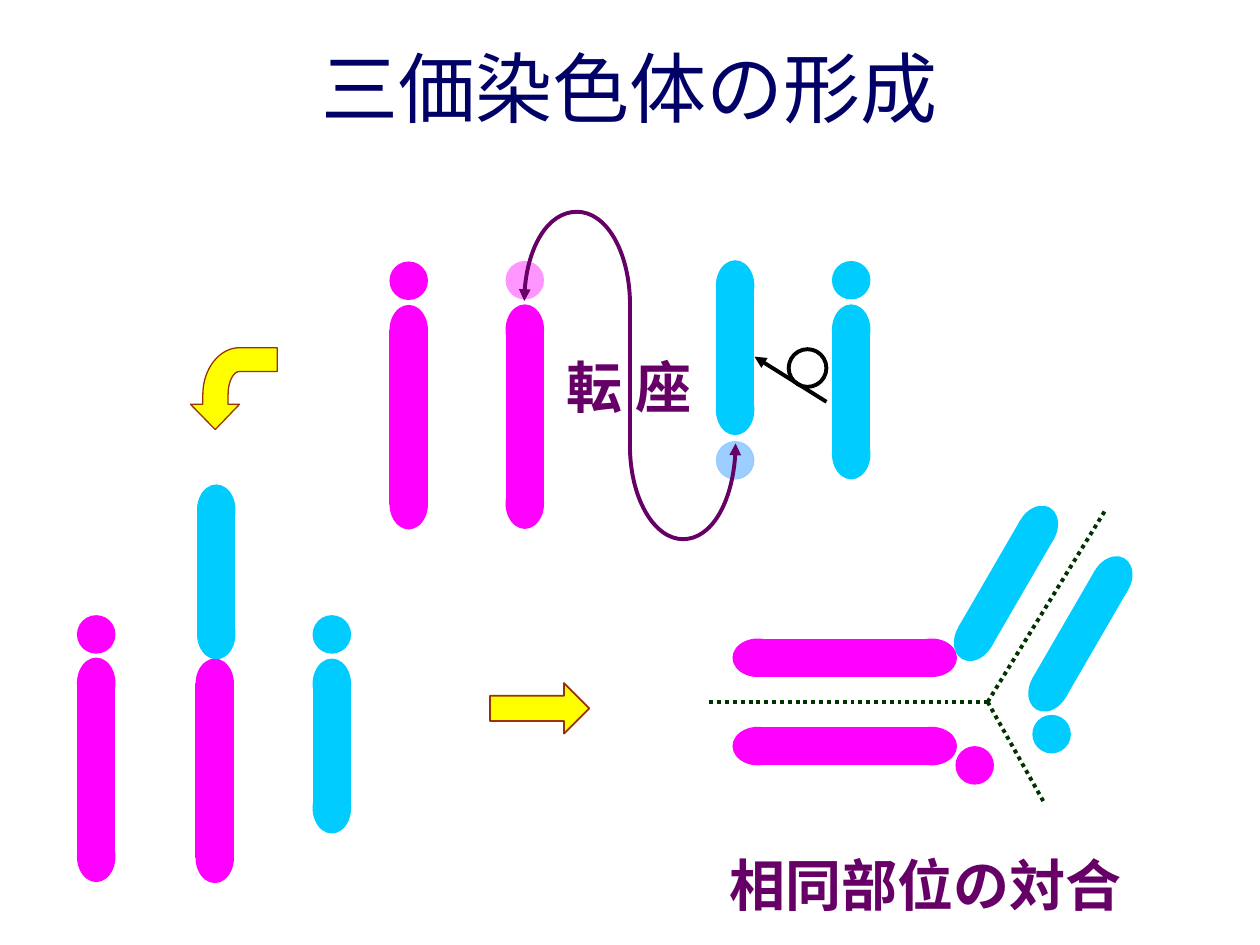
import math
from typing import NamedTuple

from lxml import etree
from pptx import Presentation
from pptx import util as u
from pptx.dml.color import RGBColor
from pptx.enum import dml, shapes, text
from pptx.oxml import ns

PINK, BLUE, PALE_PINK, PALE_BLUE = "FF00FF", "00CCFF", "FF96FF", "96CCFF"
NAVY, PURPLE, GREEN, BLACK = "000066", "660066", "003300", "000000"
YELLOW, BROWN = "FFFF00", "993300"
WIDTH, CAP, LONG, SHORT = 0.75, 1.0, 3.5, 2.5
JAPANESE = "Noto Sans CJK JP"


class Arm(NamedTuple):
    x: float
    y: float
    length: float
    color: str
    angle: float = 0


class Satellite(NamedTuple):
    x: float
    y: float
    color: str
    opacity: int = 100


class Line(NamedTuple):
    start: tuple
    end: tuple
    color: str
    dotted: bool = False
    head: bool = False


class Outline(NamedTuple):
    points: list
    curves: list
    closed: bool
    fill: str | None
    color: str
    weight: float


class Label(NamedTuple):
    words: str
    x: float
    y: float
    width: float


ARMS = [
    Arm(8.24, 8.41, LONG, PINK),
    Arm(17.16, 7.9, SHORT, BLUE),
    Arm(17.03, 13.26, LONG, PINK, 270),
    Arm(20.28, 11.76, SHORT, BLUE, 30.1),
    Arm(21.78, 12.78, SHORT, BLUE, 30.1),
    Arm(17.03, 15.04, LONG, PINK, 270),
    Arm(10.58, 8.4, LONG, PINK),
    Arm(14.82, 7.01, SHORT, BLUE),
    Arm(1.94, 15.52, LONG, PINK),
    Arm(6.69, 15.04, SHORT, BLUE),
    Arm(4.33, 15.54, LONG, PINK),
    Arm(4.36, 11.53, SHORT, BLUE),
]
SATELLITES = [
    Satellite(8.24, 5.66, PINK),
    Satellite(17.16, 5.65, BLUE),
    Satellite(19.65, 15.43, PINK),
    Satellite(21.2, 14.8, BLUE),
    Satellite(10.58, 5.65, PALE_PINK),
    Satellite(14.82, 9.28, PALE_BLUE, 94),
    Satellite(1.94, 12.79, PINK),
    Satellite(6.69, 12.79, BLUE),
]
JUNCTION = (19.91, 14.15)
LINES = [Line(JUNCTION, tip, GREEN, dotted=True)
         for tip in [(14.27, 14.15), (22.28, 10.29), (21.03, 16.15)]]
LINES += [
    Line((16.66, 8.1), (15.21, 7.19), BLACK, head=True),
    Line((12.7, 6.02), (12.7, 9.02), PURPLE),
]
BENT_ARROW = Outline(
    [(4.34, 8.66), (3.84, 8.15), (4.09, 8.15), (4.09, 7.95), (4.09, 7.44),
     (4.42, 7.01), (4.83, 7.01), (5.59, 7.01), (5.59, 7.49), (4.83, 7.49),
     (4.7, 7.49), (4.6, 7.7), (4.6, 7.95), (4.6, 8.15), (4.83, 8.15)],
    [3, 9], True, YELLOW, BROWN, 0.75)
SWAP_ARCS = [
    Outline([(12.7, 6.05), (12.67, 5.05), (12.22, 4.27), (11.63, 4.27),
             (11.05, 4.27), (10.57, 5.08), (10.57, 6.07)],
            [0, 3], False, None, PURPLE, 2.25),
    Outline([(12.7, 8.99), (12.7, 10.03), (13.18, 10.87), (13.77, 10.87),
             (14.35, 10.87), (14.83, 10.01), (14.83, 8.94)],
            [0, 3], False, None, PURPLE, 2.25),
]
LABELS = [Label("転 座", 11.18, 6.99, 3.66),
          Label("相同部位の対合", 14.45, 17.02, 9)]


def paint(target, color: str) -> None:
    if hasattr(target, "solid"):
        target.solid()
        target = target.fore_color
    target.rgb = RGBColor.from_string(color)


def apply(target, values: dict) -> None:
    for key, value in values.items():
        setattr(target, key, value)


def style(shape, fill: str | None, outline: str, weight: float) -> None:
    shape.shadow.inherit = False
    if fill:
        paint(shape.fill, fill)
    else:
        shape.fill.background()
    paint(shape.line.fill, outline)
    shape.line.width = u.Pt(weight)


def centered(parent, kind, x: float, y: float, width: float, height: float):
    return parent.add_shape(kind, u.Cm(x - width / 2), u.Cm(y - height / 2),
                            u.Cm(width), u.Cm(height))


def add_head(line) -> None:
    etree.SubElement(line.line._get_or_add_ln(), ns.qn("a:tailEnd"), type="triangle")


def draw_arm(slide, arm: Arm) -> None:
    group = slide.shapes.add_group_shape().shapes
    turn = math.radians(arm.angle)
    oval, bar = shapes.MSO_SHAPE.OVAL, shapes.MSO_SHAPE.RECTANGLE
    for kind, shift, height in [(oval, -0.5, CAP), (bar, 0, arm.length), (oval, 0.5, CAP)]:
        reach = shift * arm.length
        part = centered(group, kind, arm.x - reach * math.sin(turn),
                        arm.y + reach * math.cos(turn), WIDTH, height)
        part.rotation = arm.angle
        style(part, arm.color, arm.color, 0)


def draw_satellite(slide, satellite: Satellite) -> None:
    spot = centered(slide.shapes, shapes.MSO_SHAPE.OVAL, satellite.x, satellite.y, WIDTH, WIDTH)
    style(spot, satellite.color, satellite.color, 0)
    if satellite.opacity < 100:
        shade = spot._element.spPr.find(ns.qn("a:solidFill"))[0]
        etree.SubElement(shade, ns.qn("a:alpha"), val=str(satellite.opacity * 1000))


def draw_line(slide, line: Line) -> None:
    ends = [u.Cm(value) for value in line.start + line.end]
    stroke = slide.shapes.add_connector(shapes.MSO_CONNECTOR.STRAIGHT, *ends)
    paint(stroke.line.fill, line.color)
    stroke.line.width = u.Pt(2.25)
    if line.dotted:
        stroke.line.dash_style = dml.MSO_LINE.ROUND_DOT
    if line.head:
        add_head(stroke)
    etree.SubElement(stroke._element.spPr, ns.qn("a:effectLst"))


def draw_outline(slide, outline: Outline):
    points = [(u.Cm(x), u.Cm(y)) for x, y in outline.points]
    builder = slide.shapes.build_freeform(*points[0])
    builder.add_line_segments(points[1:], close=outline.closed)
    shape = builder.convert_to_shape()
    steps = list(shape._element.iter(ns.qn("a:lnTo")))
    for first in outline.curves:
        curve = etree.Element(ns.qn("a:cubicBezTo"))
        steps[first].addprevious(curve)
        for step in steps[first:first + 3]:
            curve.append(step[0])
            step.getparent().remove(step)
    style(shape, outline.fill, outline.color, outline.weight)
    return shape


def format_text(frame, words: str, color: str, font: dict) -> None:
    run = frame.paragraphs[0].add_run()
    run.text = words
    apply(run.font, font)
    paint(run.font.fill, color)
    etree.SubElement(run.font._element, ns.qn("a:ea"), typeface=JAPANESE)


def draw_label(slide, label: Label) -> None:
    box = slide.shapes.add_textbox(u.Cm(label.x), u.Cm(label.y), u.Cm(label.width), u.Cm(1.6))
    apply(box.text_frame, {"word_wrap": True, "auto_size": text.MSO_AUTO_SIZE.SHAPE_TO_FIT_TEXT})
    format_text(box.text_frame, label.words, PURPLE,
                {"size": u.Pt(32), "name": "Arial", "bold": True})


def main() -> None:
    deck = Presentation()
    apply(deck, {"slide_width": u.Cm(25.4), "slide_height": u.Cm(19.05)})
    slide = deck.slides.add_slide(deck.slide_layouts[5])
    title = slide.shapes.title
    apply(title, {"left": u.Cm(1.27), "top": u.Cm(0.15),
                  "width": u.Cm(22.86), "height": u.Cm(3.18)})
    title.text_frame.vertical_anchor = text.MSO_ANCHOR.MIDDLE
    title.text_frame.paragraphs[0].alignment = text.PP_ALIGN.CENTER
    format_text(title.text_frame, "三価染色体の形成", NAVY, {"size": u.Pt(44), "name": JAPANESE})

    pairing_arrow = centered(slide.shapes, shapes.MSO_SHAPE.RIGHT_ARROW, 10.88, 14.28, 2, 1.02)
    style(pairing_arrow, YELLOW, BROWN, 1)
    draw_outline(slide, BENT_ARROW)
    for items, draw in [(LABELS, draw_label), (ARMS, draw_arm),
                        (SATELLITES, draw_satellite), (LINES, draw_line)]:
        for item in items:
            draw(slide, item)
    inversion_loop = centered(slide.shapes, shapes.MSO_SHAPE.OVAL, 16.28, 7.42, 0.76, 0.76)
    style(inversion_loop, None, BLACK, 2.25)
    for arc in SWAP_ARCS:
        add_head(draw_outline(slide, arc))
    deck.save("out.pptx")


if __name__ == "__main__":
    main()
